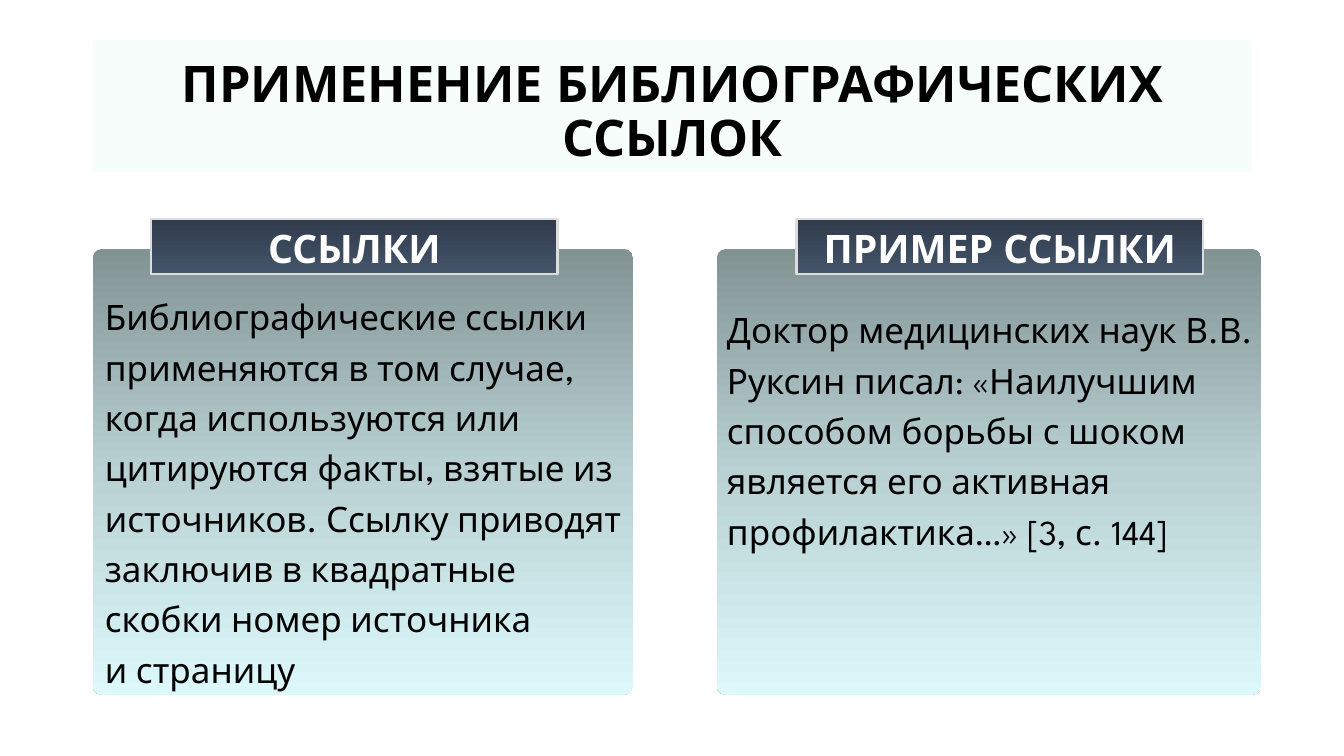
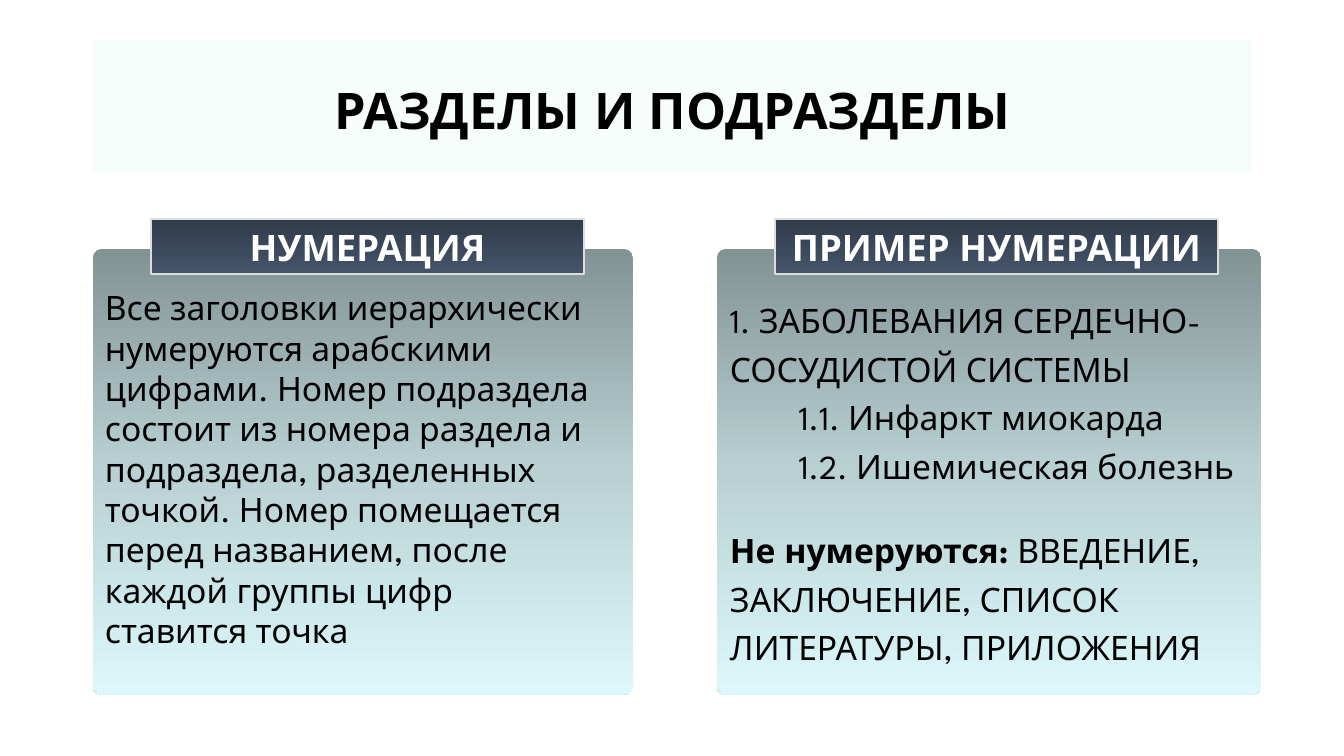
from dataclasses import dataclass

from lxml.etree import SubElement
from pptx import Presentation
from pptx.dml.color import RGBColor
from pptx.enum.shapes import MSO_SHAPE
from pptx.enum.text import MSO_ANCHOR, MSO_AUTO_SIZE, PP_ALIGN
from pptx.oxml.ns import qn
from pptx.util import Inches, Pt

FONT = "League Spartan"
BLACK, WHITE, MINT, SILVER = "000000", "FFFFFF", "EBFBF7", "DDDDDD"
PANEL_STOPS = [(0, "829394"), (50, "B9D1D3"), (100, "DCF8FA")]
HEADER_STOPS = [(0, "313C4C"), (100, "44546A")]
BAND = (0.92, 0.4, 11.5, 1.31)
TITLE = (0.92, 0.4, 11.5, 1.45)
PANELS = [(0.92, 2.47, 5.36, 4.42), (7.11, 2.47, 5.4, 4.42)]
HEADER_RISE, HEADER_HEIGHT = 0.3, 0.55
COMPARISON_LAYOUT = 4


@dataclass
class Para:
    """A body paragraph made of (text, bold) runs."""
    runs: list
    indent: float = 0
    before: float = 0


@dataclass
class Column:
    """Header and body of one panel, offset from the panel's corner."""
    header: str
    header_size: int
    header_dx: float
    header_width: float
    body: list
    body_size: int
    body_box: tuple
    spacing: float = 1.2


SLIDES = [
    ("ПРИМЕНЕНИЕ БИБЛИОГРАФИЧЕСКИХ ССЫЛОК", [
        Column("ССЫЛКИ", 28, 0.58, 4.03, [
            Para([("Библиографические ссылки применяются в том случае, "
                   "когда используются или цитируются факты, взятые из "
                   "источников. Ссылку приводят заключив в квадратные "
                   "скобки номер источника", False)]),
            Para([("и страницу", False)]),
        ], 25, (0.12, 0.38, 5.23)),
        Column("ПРИМЕР ССЫЛКИ", 28, 0.79, 4.03, [
            Para([("Доктор медицинских наук В.В. Руксин писал: «Наилучшим "
                   "способом борьбы с шоком является его активная "
                   "профилактика…» [3, с. 144]", False)]),
        ], 25, (0.1, 0.51, 5.3)),
    ]),
    ("РАЗДЕЛЫ И ПОДРАЗДЕЛЫ", [
        Column("НУМЕРАЦИЯ", 26, 0.58, 4.29, [
            Para([("Все заголовки иерархически нумеруются арабскими "
                   "цифрами. Номер подраздела состоит из номера раздела и "
                   "подраздела, разделенных точкой. Номер помещается перед "
                   "названием, после каждой группы цифр ставится точка", False)]),
        ], 24, (0.12, 0.38, 4.94), 1.0),
        Column("ПРИМЕР НУМЕРАЦИИ", 26, 0.58, 4.39, [
            Para([("1. ЗАБОЛЕВАНИЯ СЕРДЕЧНО-СОСУДИСТОЙ СИСТЕМЫ", False)]),
            Para([("1.1. Инфаркт миокарда", False)], indent=0.68),
            Para([("1.2. Ишемическая болезнь", False)], indent=0.68),
            Para([("Не нумеруются: ", True),
                  ("ВВЕДЕНИЕ, ЗАКЛЮЧЕНИЕ, СПИСОК ЛИТЕРАТУРЫ, ПРИЛОЖЕНИЯ", False)],
                 before=26),
        ], 24, (0.13, 0.43, 5.27)),
    ]),
]


def rgb(value):
    """Turn a hex string into a colour."""
    return RGBColor.from_string(value)


def apply(obj, values):
    """Set each named attribute of an object."""
    for name, value in values.items():
        setattr(obj, name, value)


def place(sp, box):
    """Move a shape to a box given in inches."""
    apply(sp, dict(zip(("left", "top", "width", "height"), map(Inches, box))))


def fill_gradient(sp, stops):
    """Fill a shape with a gradient running downwards."""
    sp.fill.gradient()
    sp.fill.gradient_angle = 270
    gs_list = sp.element.spPr.find(".//" + qn("a:gsLst"))
    for gs in list(gs_list):
        gs_list.remove(gs)
    for pos, value in stops:
        gs = SubElement(gs_list, qn("a:gs"), pos=str(pos * 1000))
        SubElement(gs, qn("a:srgbClr"), val=value)


def format_frame(tf, anchor, insets=(0, 0, 0, 0)):
    """Set anchor, insets and wrapping of a text frame."""
    sides = ("margin_left", "margin_top", "margin_right", "margin_bottom")
    apply(tf, {"word_wrap": True, "auto_size": MSO_AUTO_SIZE.NONE,
               "vertical_anchor": anchor})
    apply(tf, dict(zip(sides, map(Inches, insets))))


def write_paragraph(p, para, size, color, align, spacing):
    """Write a paragraph without a bullet."""
    pPr = p._p.get_or_add_pPr()
    apply(p, {"alignment": align, "line_spacing": spacing,
              "space_before": Pt(para.before), "space_after": Pt(0)})
    pPr.set("marL", str(Inches(para.indent)))
    pPr.set("indent", "0")
    SubElement(pPr, qn("a:buNone"))
    for text, bold in para.runs:
        r = p.add_run()
        r.text = text
        apply(r.font, {"name": FONT, "size": Pt(size), "bold": bold})
        r.font.color.rgb = rgb(color)


def add_backdrop(s):
    """Put the title band and both panels on the slide's layout."""
    band = s.shapes.add_shape(MSO_SHAPE.RECTANGLE, *map(Inches, BAND))
    band.fill.solid()
    band.fill.fore_color.rgb = rgb(MINT)
    SubElement(band.element.spPr.find(".//" + qn("a:srgbClr")),
               qn("a:alpha"), val="38000")
    parts = [band]
    for box in PANELS:
        panel = s.shapes.add_shape(MSO_SHAPE.ROUNDED_RECTANGLE, *map(Inches, box))
        panel.adjustments[0] = 0.02
        fill_gradient(panel, PANEL_STOPS)
        parts.append(panel)
    tree = s.slide_layout.shapes.element
    for i, sp in enumerate(parts):
        sp.shadow.inherit = False
        sp.line.fill.background()
        sp.element.nvSpPr.cNvPr.set("id", str(100 + i))
        tree.insert(2 + i, sp.element)


def add_title(sp, text):
    """Fill the title placeholder."""
    place(sp, TITLE)
    format_frame(sp.text_frame, MSO_ANCHOR.MIDDLE, (0.1, 0.05, 0.1, 0.05))
    write_paragraph(sp.text_frame.paragraphs[0], Para([(text, True)]),
                    36, BLACK, PP_ALIGN.CENTER, 0.9)


def add_column(header, body, panel, column):
    """Fill a header and a body placeholder over a panel box."""
    left, top, _, height = panel
    place(header, (left + column.header_dx, top - HEADER_RISE,
                   column.header_width, HEADER_HEIGHT))
    fill_gradient(header, HEADER_STOPS)
    header.line.color.rgb = rgb(SILVER)
    header.line.width = Pt(1.5)
    format_frame(header.text_frame, MSO_ANCHOR.TOP, (0.05, 0.06, 0.05, 0))
    write_paragraph(header.text_frame.paragraphs[0], Para([(column.header, True)]),
                    column.header_size, WHITE, PP_ALIGN.CENTER, 1.0)

    dx, dy, width = column.body_box
    place(body, (left + dx, top + dy, width, height - dy))
    tf = body.text_frame
    format_frame(tf, MSO_ANCHOR.TOP)
    for i, para in enumerate(column.body):
        p = tf.add_paragraph() if i else tf.paragraphs[0]
        write_paragraph(p, para, column.body_size, BLACK,
                        PP_ALIGN.LEFT, column.spacing)


def add_comparison(prs, title, columns):
    """Add a slide with a title and two headed panels."""
    s = prs.slides.add_slide(prs.slide_layouts[COMPARISON_LAYOUT])
    add_title(s.shapes.title, title)
    holders = {sp.placeholder_format.idx: sp for sp in s.placeholders}
    for i, (panel, column) in enumerate(zip(PANELS, columns)):
        add_column(holders[2 * i + 1], holders[2 * i + 2], panel, column)
    return s


def main():
    """Build and save the presentation."""
    prs = Presentation()
    apply(prs, {"slide_width": Inches(13.33), "slide_height": Inches(7.5)})
    slides = [add_comparison(prs, title, columns) for title, columns in SLIDES]
    add_backdrop(slides[0])
    prs.save("out.pptx")


if __name__ == "__main__":
    main()
